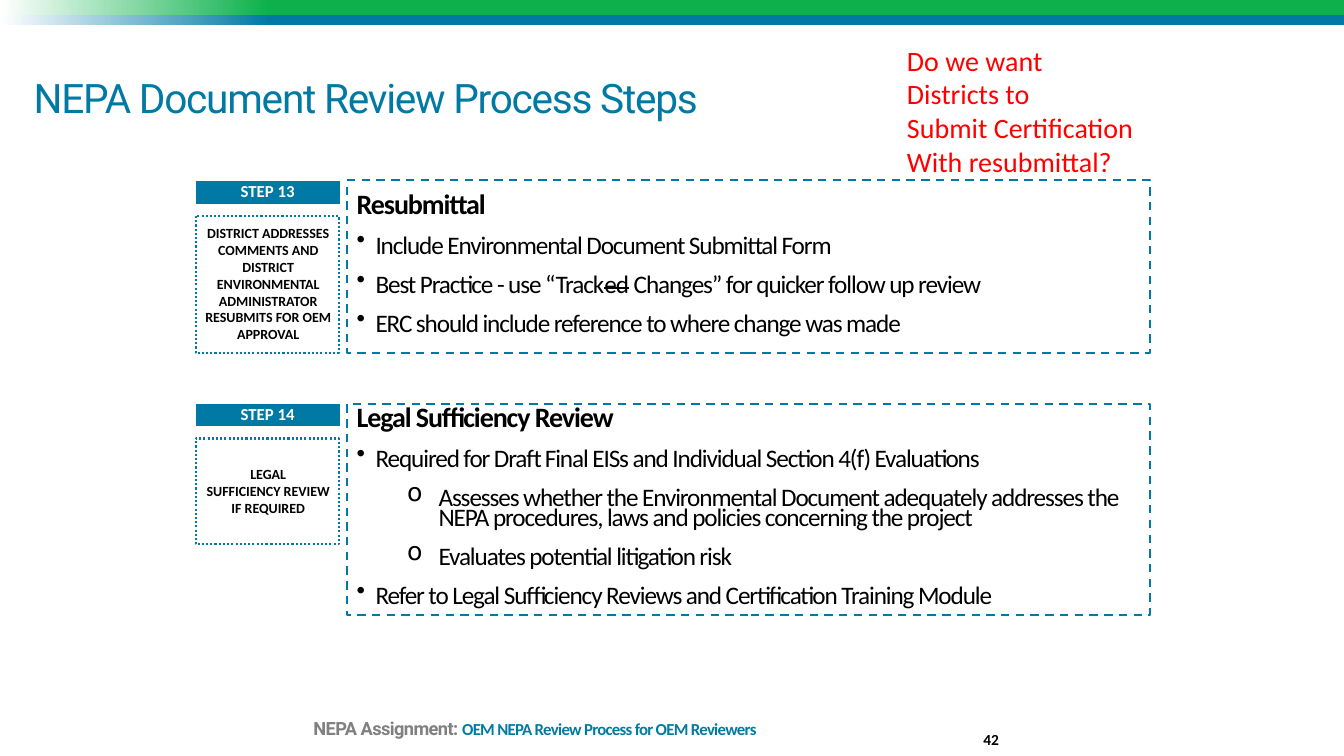
"""Build the NEPA document review slide covering steps 13 and 14."""
from dataclasses import dataclass
from typing import Any, Optional

from lxml import etree
from pptx import Presentation
from pptx.dml.color import RGBColor
from pptx.enum.dml import MSO_LINE
from pptx.enum.shapes import MSO_SHAPE
from pptx.enum.text import MSO_ANCHOR, PP_ALIGN
from pptx.oxml.ns import qn
from pptx.util import Pt

RECTANGLE = MSO_SHAPE.RECTANGLE
DASH, DOT = MSO_LINE.DASH, MSO_LINE.ROUND_DOT
TOP, MIDDLE, BOTTOM = MSO_ANCHOR.TOP, MSO_ANCHOR.MIDDLE, MSO_ANCHOR.BOTTOM
LEFT, CENTER, RIGHT = PP_ALIGN.LEFT, PP_ALIGN.CENTER, PP_ALIGN.RIGHT

WHITE = RGBColor(0xFF, 0xFF, 0xFF)
BLACK = RGBColor(0x00, 0x00, 0x00)
GREEN = RGBColor(0x0D, 0xB1, 0x4B)
BLUE = RGBColor(0x00, 0x7A, 0xA4)
FOOTER_BLUE = RGBColor(0x00, 0x7B, 0xA2)
GRAY = RGBColor(0x80, 0x80, 0x80)
RED = RGBColor(0xFF, 0x00, 0x00)

BAR_LEFT, BAR_WIDTH, BAR_HEIGHT = 139, 104.4, 17.3
FRAME_LEFT, FRAME_WIDTH, FRAME_OFFSET = 139.7, 102.2, 25.2
CAPTION_LEFT, CAPTION_WIDTH = 135.4, 112.3
PANEL_LEFT, PANEL_WIDTH = 247.7, 573.8


@dataclass(frozen=True)
class Piece:
    text: str
    size: float
    color: RGBColor = BLACK
    bold: bool = False
    font: str = "Calibri"
    spacing: float = 0
    strike: bool = False


@dataclass(frozen=True)
class Line:
    pieces: tuple[Piece, ...]
    align: Any = LEFT
    line_spacing: Optional[float] = None
    space_after: float = 0
    bullet: str = ""
    margin: float = 0
    indent: float = 0


@dataclass(frozen=True)
class Step:
    label: str
    top: float
    frame_height: float
    caption: tuple[str, ...]
    caption_height: float
    panel_top: float
    panel_height: float
    lines: tuple[Line, ...]


def panel_heading(text: str) -> Line:
    return Line((Piece(text, 20, bold=True, spacing=-0.8),), LEFT, 0.65, 14)


def panel_bullet(*texts: str, struck: str = "") -> Line:
    pieces = tuple(Piece(text, 18, spacing=-0.8, strike=text == struck) for text in texts)
    return Line(pieces, LEFT, 0.65, 14, "•", 13.5, -13.5)


def panel_detail(text: str) -> Line:
    return Line((Piece(text, 18, spacing=-0.8),), LEFT, 0.65, 14, "o", 58.5, -22.5)


STEPS = (
    Step("STEP 13", 128.9, 97.9,
         ("DISTRICT ADDRESSES COMMENTS AND DISTRICT ENVIRONMENTAL "
          "ADMINISTRATOR RESUBMITS FOR OEM APPROVAL",), 92.2, 128.9, 123.1,
         (panel_heading("Resubmittal"),
          panel_bullet("Include Environmental Document Submittal Form"),
          panel_bullet("Best Practice - use “Track", "ed",
                       " Changes” for quicker follow up review", struck="ed"),
          panel_bullet("ERC should include reference to where change was made"))),
    Step("STEP 14", 288, 75.6,
         ("LEGAL", "SUFFICIENCY REVIEW", "IF REQUIRED"), 43.9, 288.7, 150.5,
         (panel_heading("Legal Sufficiency Review"),
          panel_bullet("Required for Draft Final EISs and Individual Section 4(f) Evaluations"),
          panel_detail("Assesses whether the Environmental Document adequately addresses the "
                       "NEPA procedures, laws and policies concerning the project"),
          panel_detail("Evaluates potential litigation risk"),
          panel_bullet("Refer to Legal Sufficiency Reviews and Certification Training Module"))),
)
CALLOUT = ("Do we want", "Districts to", "Submit Certification", "With resubmittal?")


def apply_format(target: Any, values: dict[str, Any]) -> None:
    for name, value in values.items():
        setattr(target, name, value)


def write_piece(paragraph: Any, piece: Piece) -> None:
    run = paragraph.add_run()
    run.text = piece.text
    apply_format(run.font, {"size": Pt(piece.size), "name": piece.font, "bold": piece.bold})
    run.font.color.rgb = piece.color
    properties = run._r.get_or_add_rPr()
    if piece.spacing:
        properties.set("spc", str(round(piece.spacing * 100)))
    if piece.strike:
        properties.set("strike", "sngStrike")


def write_lines(shape: Any, lines: tuple[Line, ...], anchor: Any = TOP,
                inset_x: float = 7.2, inset_y: float = 3.6) -> None:
    frame = shape.text_frame
    apply_format(frame, {
        "word_wrap": True, "vertical_anchor": anchor,
        "margin_left": Pt(inset_x), "margin_right": Pt(inset_x),
        "margin_top": Pt(inset_y), "margin_bottom": Pt(inset_y)})
    for index, line in enumerate(lines):
        paragraph = frame.add_paragraph() if index else frame.paragraphs[0]
        apply_format(paragraph, {
            "alignment": line.align, "line_spacing": line.line_spacing,
            "space_after": Pt(line.space_after)})
        properties = paragraph._p.get_or_add_pPr()
        properties.set("marL", str(Pt(line.margin)))
        properties.set("indent", str(Pt(line.indent)))
        if line.bullet:
            etree.SubElement(properties, qn("a:buChar")).set("char", line.bullet)
        for piece in line.pieces:
            write_piece(paragraph, piece)


def add_rectangle(slide: Any, left: float, top: float, width: float, height: float,
                  line: Optional[RGBColor] = None, dash: Any = None,
                  fill: Optional[RGBColor] = None) -> Any:
    shape = slide.shapes.add_shape(RECTANGLE, Pt(left), Pt(top), Pt(width), Pt(height))
    shape.shadow.inherit = False
    if fill is None:
        shape.fill.background()
    else:
        shape.fill.solid()
        shape.fill.fore_color.rgb = fill
    if line is None:
        shape.line.fill.background()
    else:
        shape.line.color.rgb = line
        apply_format(shape.line, {"width": Pt(1.5), "dash_style": dash})
    return shape


def add_text(slide: Any, left: float, top: float, width: float, height: float,
             lines: tuple[Line, ...], anchor: Any = TOP,
             inset_x: float = 0, inset_y: float = 0) -> None:
    box = slide.shapes.add_textbox(Pt(left), Pt(top), Pt(width), Pt(height))
    write_lines(box, lines, anchor, inset_x, inset_y)


def add_band(slide: Any, top: float, height: float, color: RGBColor) -> None:
    band = add_rectangle(slide, 0, top, 960, height)
    band.fill.gradient()
    band.fill.gradient_angle = 0
    for stop, position, shade in zip(band.fill.gradient_stops, (0, 0.2), (WHITE, color)):
        stop.position = position
        stop.color.rgb = shade


def add_step(slide: Any, step: Step) -> None:
    frame_top = step.top + FRAME_OFFSET
    add_rectangle(slide, FRAME_LEFT, frame_top, FRAME_WIDTH, step.frame_height, BLUE, DOT)
    caption_top = frame_top + (step.frame_height - step.caption_height) / 2
    caption = tuple(Line((Piece(text, 10, bold=True),), CENTER) for text in step.caption)
    add_text(slide, CAPTION_LEFT, caption_top, CAPTION_WIDTH, step.caption_height,
             caption, TOP, 7.2, 3.6)
    bar = add_rectangle(slide, BAR_LEFT, step.top, BAR_WIDTH, BAR_HEIGHT, WHITE, fill=BLUE)
    label = Line((Piece(step.label, 12, WHITE, True),), CENTER, 0.9)
    write_lines(bar, (label,), MIDDLE, 3.6, 3.6)
    panel = add_rectangle(slide, PANEL_LEFT, step.panel_top, PANEL_WIDTH,
                          step.panel_height, BLUE, DASH)
    write_lines(panel, step.lines, MIDDLE)


def main() -> None:
    presentation = Presentation()
    apply_format(presentation, {"slide_width": Pt(960), "slide_height": Pt(540)})
    slide = presentation.slides.add_slide(presentation.slide_layouts[6])
    add_band(slide, 0, 10.8, GREEN)
    add_band(slide, 10.8, 7.2, BLUE)
    footer = (Piece("NEPA Assignment: ", 13, GRAY, True, "Roboto", -0.4),
              Piece("OEM NEPA Review Process for OEM Reviewers", 12, FOOTER_BLUE, True,
                    spacing=-0.5))
    add_text(slide, 223.9, 493.9, 519.1, 33.8, (Line(footer, LEFT, 0.8, 12),), BOTTOM)
    title = Piece("NEPA Document Review Process Steps", 29, BLUE, False, "Roboto", -0.9)
    add_text(slide, 24, 21.6, 864, 64.8, (Line((title,), LEFT, 0.8),), BOTTOM)
    add_text(slide, 671.8, 506.2, 41.8, 28.8,
             (Line((Piece("42", 11, bold=True),), RIGHT),), BOTTOM)
    for step in STEPS:
        add_step(slide, step)
    callout = tuple(Line((Piece(text, 20, RED),), margin=36) for text in CALLOUT)
    add_text(slide, 604.8, 27.4, 218.9, 104.4, callout, TOP, 7.2, 3.6)
    presentation.save("out.pptx")


if __name__ == "__main__":
    main()
